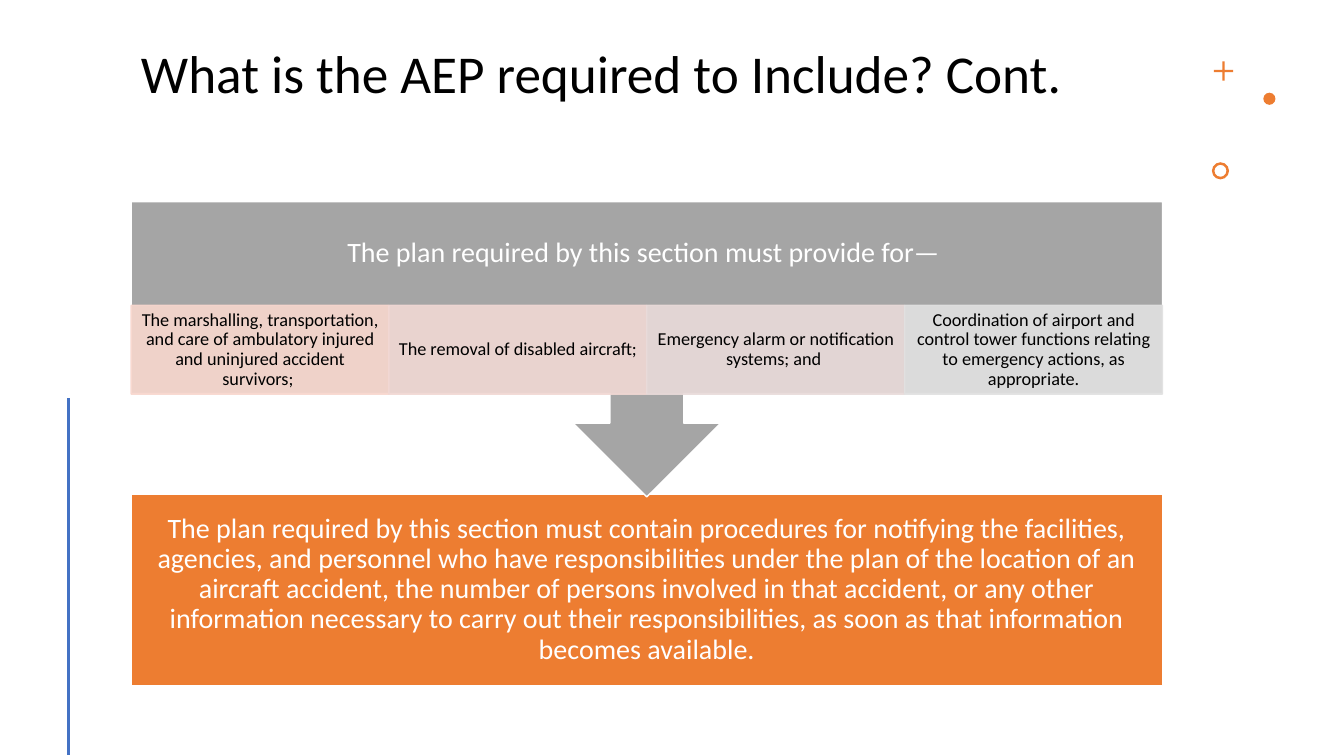
import dataclasses

import lxml.etree
import pptx
import pptx.dml.color
import pptx.enum.shapes
import pptx.enum.text
import pptx.oxml.ns
import pptx.util

Inches = pptx.util.Inches
Pt = pptx.util.Pt
qn = pptx.oxml.ns.qn
Kind = pptx.enum.shapes.MSO_SHAPE
Anchor = pptx.enum.text.MSO_ANCHOR
Align = pptx.enum.text.PP_ALIGN

COLOURS = {
    "orange": "ED7D31",
    "blue": "4472C4",
    "grey": "A5A5A5",
    "white": "FFFFFF",
    "black": "000000",
    "rose": "F8D7CE",
    "blush": "F1D8D4",
    "mauve": "E9DBDA",
    "silver": "E1E1E1",
}
LEFT, WIDTH = 1.3, 10.23
PLAN_TOP, PLAN_HEIGHT = 2.0, 1.03
ITEM_TOP, ITEM_HEIGHT = 3.03, 0.88


@dataclasses.dataclass
class Label:
    text: str
    size: float
    colour: str
    align: Align = Align.CENTER
    anchor: Anchor = Anchor.MIDDLE
    margin_x: float = 0.16
    margin_y: float = 0.16


@dataclasses.dataclass
class Block:
    kind: Kind
    left: float
    top: float
    width: float
    height: float
    fill: str
    line: str | None = None
    label: Label | None = None
    opacity: int = 100
    rotation: float = 0
    adjustment: float | None = None


def rgb(name: str) -> pptx.dml.color.RGBColor:
    return pptx.dml.color.RGBColor.from_string(COLOURS[name])


def write_label(frame, label: Label) -> None:
    frame.word_wrap = True
    frame.vertical_anchor = label.anchor
    frame.margin_left = frame.margin_right = Inches(label.margin_x)
    frame.margin_top = frame.margin_bottom = Inches(label.margin_y)
    para = frame.paragraphs[0]
    para.alignment = label.align
    para.line_spacing = 0.9
    span = para.add_run()
    span.text = label.text
    span.font.name = "Calibri"
    span.font.size = Pt(label.size)
    span.font.color.rgb = rgb(label.colour)


def draw_text(page, left: float, top: float, width: float, height: float, label: Label) -> None:
    box = page.shapes.add_textbox(Inches(left), Inches(top), Inches(width), Inches(height))
    write_label(box.text_frame, label)


def draw_block(page, block: Block) -> None:
    shape = page.shapes.add_shape(
        block.kind, Inches(block.left), Inches(block.top), Inches(block.width), Inches(block.height)
    )
    shape.shadow.inherit = False
    shape.rotation = block.rotation
    if block.adjustment is not None:
        shape.adjustments[0] = block.adjustment
    shape.fill.solid()
    shape.fill.fore_color.rgb = rgb(block.fill)
    if block.line:
        shape.line.color.rgb = rgb(block.line)
        shape.line.width = Pt(1)
    else:
        shape.line.fill.background()
    if block.opacity < 100:
        for colour in list(shape.element.spPr.iter(qn("a:srgbClr"))):
            alpha = lxml.etree.SubElement(colour, qn("a:alpha"))
            alpha.set("val", str(block.opacity * 1000))
    if block.label:
        write_label(shape.text_frame, block.label)


def draw_side_line(page) -> None:
    line = page.shapes.add_connector(
        pptx.enum.shapes.MSO_CONNECTOR.STRAIGHT, Inches(0.68), Inches(3.95), Inches(0.68), Inches(7.49)
    )
    line.line.color.rgb = rgb("blue")
    line.line.width = Pt(2)
    lxml.etree.SubElement(line.element.spPr, qn("a:effectLst"))


TITLE = Label(
    "What is the AEP required to Include? Cont.", 38, "black", Align.LEFT, Anchor.TOP, 0.1, 0.05
)
PLAN = Label("The plan required by this section must provide for— ", 20, "white")
NOTIFICATION = Label(
    "The plan required by this section must contain procedures for notifying the facilities, "
    "agencies, and personnel who have responsibilities under the plan of the location of an "
    "aircraft accident, the number of persons involved in that accident, or any other "
    "information necessary to carry out their responsibilities, as soon as that information "
    "becomes available.",
    20,
    "white",
)
ITEMS = [
    ("rose", "The marshalling, transportation, and care of ambulatory injured and uninjured "
             "accident survivors; "),
    ("blush", "The removal of disabled aircraft; "),
    ("mauve", "Emergency alarm or notification systems; and "),
    ("silver", "Coordination of airport and control tower functions relating to emergency "
               "actions, as appropriate."),
]
ORNAMENTS = [
    Block(Kind.CROSS, 12.04, 0.61, 0.19, 0.19, "orange", adjustment=0.44),
    Block(Kind.OVAL, 12.53, 0.92, 0.12, 0.12, "orange"),
    Block(Kind.DONUT, 12.02, 1.61, 0.17, 0.17, "orange", adjustment=0.15),
]


def main() -> None:
    deck = pptx.Presentation()
    deck.slide_width, deck.slide_height = Inches(13.33), Inches(7.5)
    page = deck.slides.add_slide(deck.slide_layouts[6])

    # Title and corner ornaments
    draw_text(page, LEFT, 0.42, WIDTH, 1.31, TITLE)
    for ornament in ORNAMENTS:
        draw_block(page, ornament)
    draw_side_line(page)

    # Notification box, then the callout pointing down to it
    draw_block(page, Block(Kind.RECTANGLE, LEFT, 4.9, WIDTH, 1.9, "orange", "white", NOTIFICATION))
    draw_block(
        page, Block(Kind.UP_ARROW_CALLOUT, LEFT, PLAN_TOP, WIDTH, 2.93, "grey", "white", rotation=180)
    )
    draw_text(page, LEFT, PLAN_TOP, WIDTH, PLAN_HEIGHT, PLAN)

    # Row of plan items
    item_width = WIDTH / len(ITEMS)
    for column, (colour, text) in enumerate(ITEMS):
        label = Label(text, 13, "black", margin_x=0.1, margin_y=0.02)
        left = LEFT + column * item_width
        draw_block(
            page,
            Block(Kind.RECTANGLE, left, ITEM_TOP, item_width, ITEM_HEIGHT, colour, colour, label, 90),
        )

    deck.save("out.pptx")


if __name__ == "__main__":
    main()
